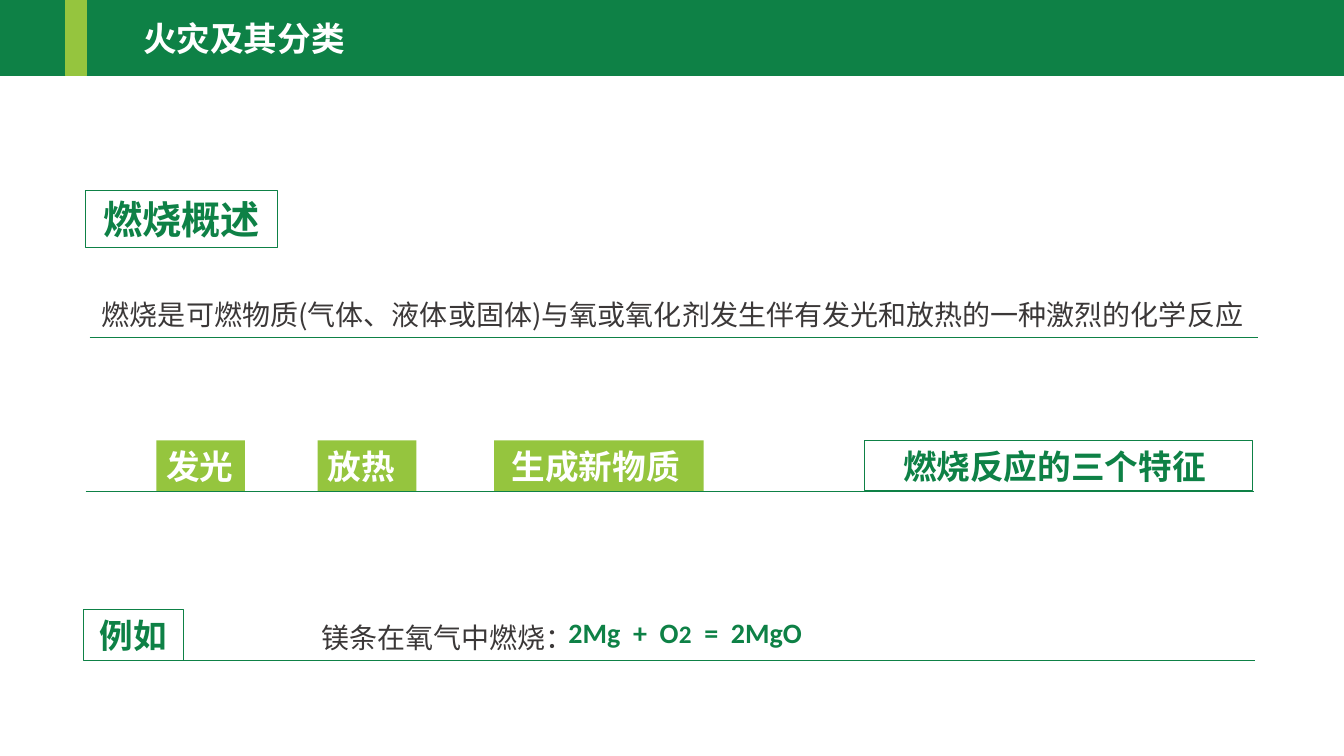
import pptx
import pptx.dml.color
import pptx.enum.shapes
import pptx.enum.text
import pptx.oxml
import pptx.oxml.ns
import pptx.util
from pptx.util import Inches

GREEN, LIME, WHITE, GREY = "0E8146", "95C53E", "FFFFFF", "3B3838"
CJK = "Noto Sans CJK SC"
CENTER = pptx.enum.text.PP_ALIGN.CENTER
LEFT = pptx.enum.text.PP_ALIGN.LEFT
TOP = pptx.enum.text.MSO_ANCHOR.TOP
MIDDLE = pptx.enum.text.MSO_ANCHOR.MIDDLE
AUTO = pptx.enum.text.MSO_AUTO_SIZE
RECTANGLE = pptx.enum.shapes.MSO_SHAPE.RECTANGLE

deck = pptx.Presentation()
deck.slide_width, deck.slide_height = Inches(13.33), Inches(7.5)
page = deck.slides.add_slide(deck.slide_layouts[6])


def color(code):
    return pptx.dml.color.RGBColor.from_string(code)


def add_box(place, text="", size=24, ink=GREEN, bold=True, font=CJK, align=LEFT, anchor=TOP,
            fill=None, line=None, weight=0.75, spacing=None, before=0, wrap=True, grow=True):
    """Add a rectangle or text box; text is a string or a list of (string, size)."""
    place = [Inches(value) for value in place]
    if fill or line:
        box = page.shapes.add_shape(RECTANGLE, *place)
        box.shadow.inherit = False
        if fill:
            box.fill.solid()
            box.fill.fore_color.rgb = color(fill)
        else:
            box.fill.background()
        if line:
            box.line.color.rgb = color(line)
            box.line.width = pptx.util.Pt(weight)
        else:
            box.line.fill.background()
    else:
        box = page.shapes.add_textbox(*place)
    if not text:
        return
    frame = box.text_frame
    frame.word_wrap = wrap
    frame.auto_size = AUTO.SHAPE_TO_FIT_TEXT if grow else AUTO.NONE
    frame.vertical_anchor = anchor
    para = frame.paragraphs[0]
    para.alignment = align
    para.line_spacing = spacing
    para.space_before = pptx.util.Pt(before)
    for words, points in [(text, size)] if isinstance(text, str) else text:
        span = para.add_run()
        span.text = words
        span.font.size = pptx.util.Pt(points)
        span.font.bold = bold
        span.font.name = font
        span.font.color.rgb = color(ink)
        east_asian = pptx.oxml.parse_xml(
            f'<a:ea {pptx.oxml.ns.nsdecls("a")} typeface="{font}"/>')
        span.font._element.find(pptx.oxml.ns.qn("a:latin")).addnext(east_asian)


# Title band
add_box((0, 0, 13.33, 0.75), fill=GREEN, line=GREEN, weight=1)
add_box((0.65, -0.02, 0.21, 0.77), fill=LIME, line=LIME, weight=1)
add_box((1.32, 0.13, 3.35, 0.5), "火灾及其分类", ink=WHITE, anchor=MIDDLE, wrap=False, grow=False)

# Definition of combustion
add_box((0.85, 1.89, 1.9, 0.57), "燃烧概述", size=28, align=CENTER, line=GREEN)
add_box((0.85, 2.74, 11.77, 0.61),
        " 燃烧是可燃物质(气体、液体或固体)与氧或氧化剂发生伴有发光和放热的一种激烈的化学反应",
        size=20, ink=GREY, bold=False, spacing=1.5)

# Three features of the reaction
add_box((8.57, 4.37, 3.85, 0.5), "燃烧反应的三个特征 ", align=CENTER, line=GREEN)
for left, width, feature in [(1.55, 0.88, "发光"), (3.15, 0.98, "放热"), (4.9, 2.08, " 生成新物质")]:
    add_box((left, 4.37, width, 0.5), feature, ink=WHITE, fill=LIME)

# Example
add_box((0.83, 6.05, 0.99, 0.5), "例如", align=CENTER, line=GREEN)
add_box((3.09, 5.94, 2.45, 0.61), "镁条在氧气中燃烧：", size=20, ink=GREY, bold=False, spacing=1.5)
add_box((5.54, 6.09, 2.54, 0.4), [("2Mg  +  O", 20), ("2", 18), ("  =  2MgO", 20)],
        font="Calibri", spacing=0.9, before=4, wrap=False)

# Rules under the three sections
for left, height in [(0.89, 3.35), (0.85, 4.87), (0.86, 6.55)]:
    rule = page.shapes.add_connector(
        pptx.enum.shapes.MSO_CONNECTOR.STRAIGHT,
        Inches(left), Inches(height), Inches(left + 11.59), Inches(height))
    rule.line.color.rgb = color(GREEN)
    rule.line.width = pptx.util.Pt(0.5)
    rule._element.spPr.append(
        pptx.oxml.parse_xml(f'<a:effectLst {pptx.oxml.ns.nsdecls("a")}/>'))

deck.save("out.pptx")
